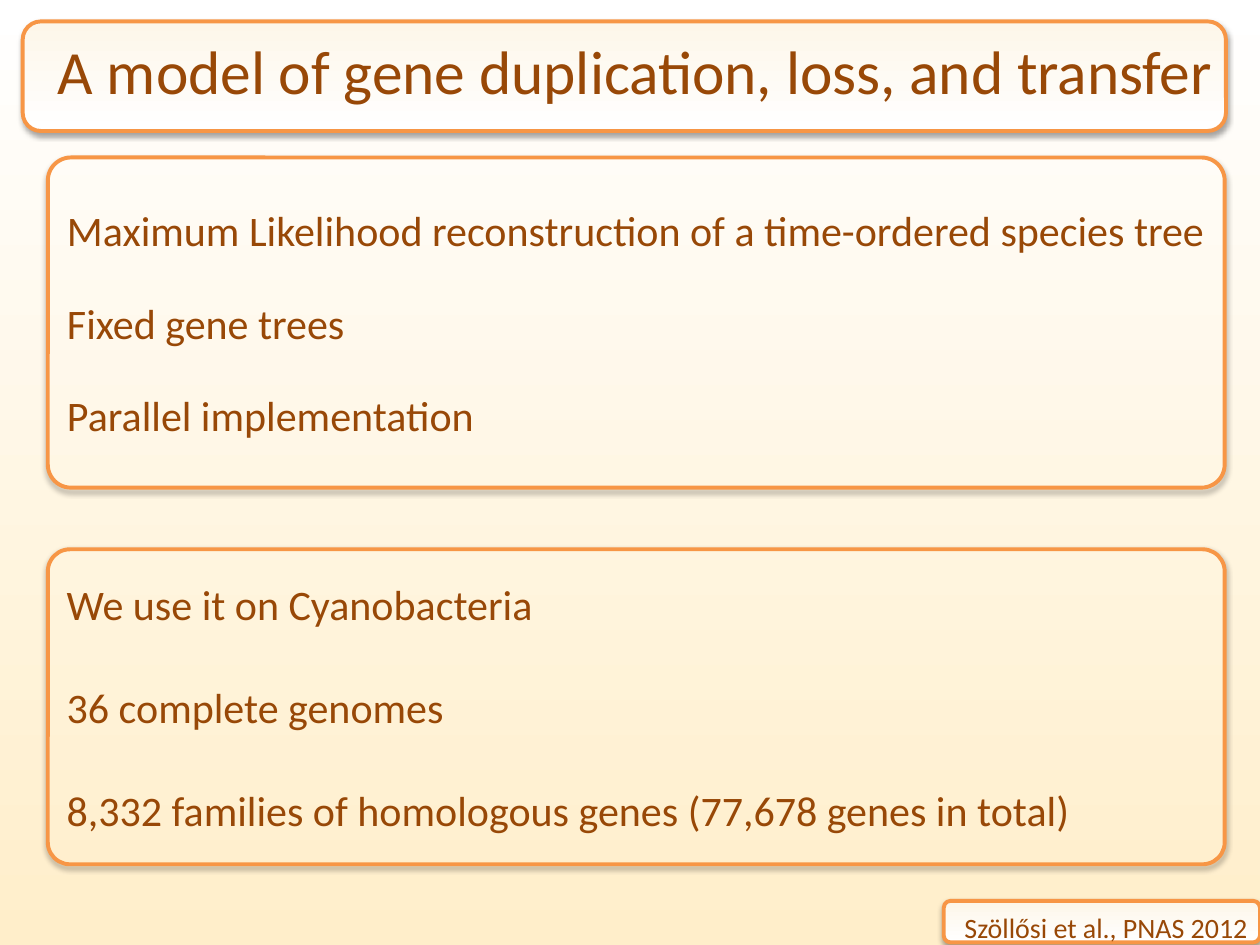
from lxml.etree import SubElement
from pptx import Presentation
from pptx.dml.color import RGBColor
from pptx.enum.shapes import MSO_SHAPE
from pptx.enum.text import MSO_ANCHOR, MSO_AUTO_SIZE, PP_ALIGN
from pptx.oxml.ns import qn
from pptx.util import Inches, Pt

TITLE = "A model of gene duplication, loss, and transfer"
CITE = "Szöllősi et al., PNAS 2012"
PLATES = [(7.49, 7.15, 2.51, 0.33), (0.18, 0.17, 9.55, 0.87)]
BOXES = [
    (1.25, 2.62, 24, [
        "Maximum Likelihood reconstruction of a time-ordered species tree",
        "Fixed gene trees",
        "Parallel implementation",
    ]),
    (4.36, 2.5, 30, [
        "We use it on Cyanobacteria",
        "36 complete genomes",
        "8,332 families of homologous genes (77,678 genes in total)",
    ]),
]

WHITE = RGBColor(0xFF, 0xFF, 0xFF)
CREAM = RGBColor(0xFF, 0xEE, 0xCA)
IVORY = RGBColor(0xFD, 0xF6, 0xE9)
ORANGE = RGBColor(0xF7, 0x96, 0x46)
BROWN = RGBColor(0x98, 0x48, 0x07)


def shade(fill, end, angle):
    fill.gradient()
    fill.gradient_angle = angle
    for stop, color, place in zip(fill.gradient_stops, (WHITE, end), (0, 1)):
        stop.color.rgb = color
        stop.position = place


def write(shape, lines, size=24, align=PP_ALIGN.LEFT, gap=0,
          anchor=MSO_ANCHOR.MIDDLE, fit=MSO_AUTO_SIZE.NONE):
    frame = shape.text_frame
    frame.word_wrap = True
    frame.auto_size = fit
    frame.vertical_anchor = anchor
    frame.text = "\n".join(lines)
    for para in frame.paragraphs:
        para.alignment = align
        para.space_after = Pt(gap)
        para.font.size = Pt(size)
        para.font.name = "Calibri"
        para.font.color.rgb = BROWN


def panel(slide, *at):
    shape = slide.shapes.add_shape(
        MSO_SHAPE.ROUNDED_RECTANGLE, *map(Inches, at))
    shape.line.color.rgb = ORANGE
    shape.line.width = Pt(2.25)
    shape.shadow.inherit = False
    glow = shape._element.spPr.find(qn("a:effectLst"))
    drop = SubElement(glow, qn("a:outerShdw"), blurRad="40000",
                      dist="23000", dir="5400000", rotWithShape="0")
    tint = SubElement(drop, qn("a:srgbClr"), val="000000")
    SubElement(tint, qn("a:alpha"), val="35000")
    return shape


def main():
    deck = Presentation()
    deck.slide_width, deck.slide_height = Inches(10), Inches(7.5)
    slide = deck.slides.add_slide(deck.slide_layouts[5])
    shade(slide.background.fill, CREAM, 270)

    for at in PLATES:
        shade(panel(slide, *at).fill, IVORY, 90)

    title = slide.shapes.title
    title.left, title.top = Inches(0.18), Inches(0)
    title.width, title.height = Inches(9.72), Inches(1.11)
    write(title, [TITLE], size=35.1, align=PP_ALIGN.CENTER)
    slide.shapes._spTree.append(title._element)

    for top, height, gap, lines in BOXES:
        box = panel(slide, 0.38, top, 9.34, height)
        box.adjustments[0] = 0.07
        box._element.set("useBgFill", "1")
        write(box, lines, gap=gap)

    cite = slide.shapes.add_textbox(
        Inches(7.37), Inches(7.18), Inches(2.63), Inches(0.37))
    write(cite, [CITE], size=16, align=PP_ALIGN.RIGHT,
          anchor=MSO_ANCHOR.TOP, fit=MSO_AUTO_SIZE.SHAPE_TO_FIT_TEXT)
    deck.save("out.pptx")


if __name__ == "__main__":
    main()
